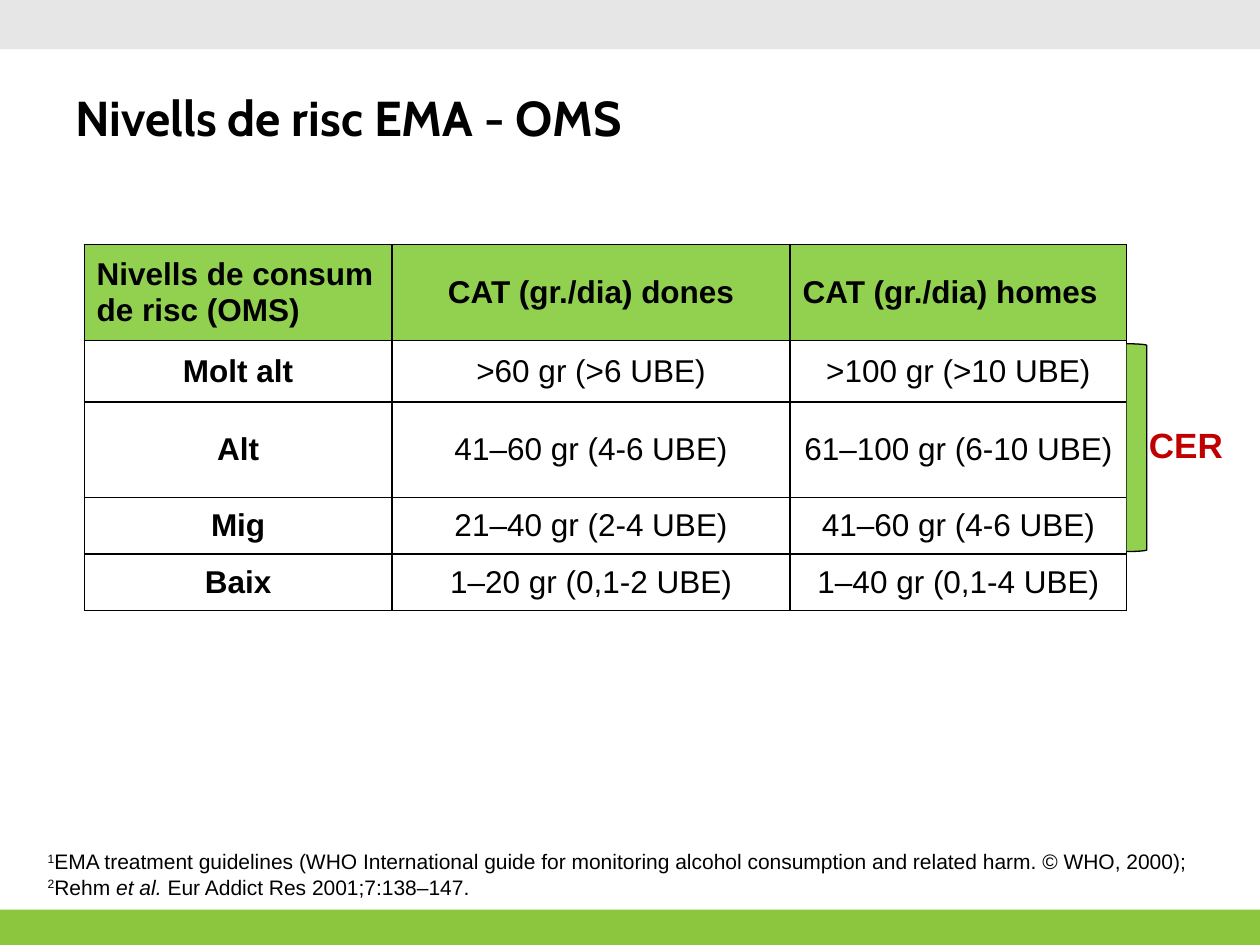
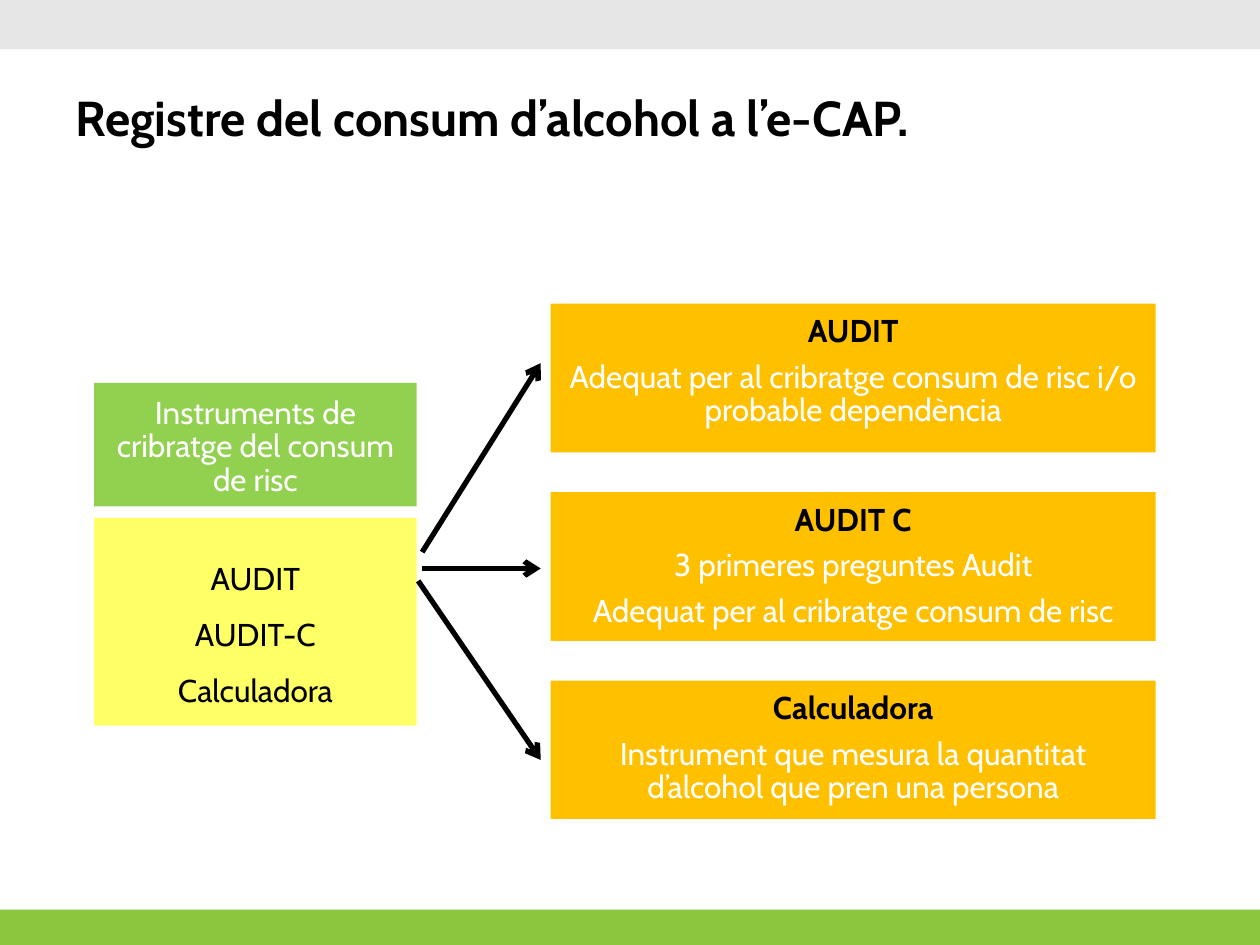
import pptx
import pptx.util
import pptx.dml.color
import pptx.enum.shapes
import pptx.enum.text
import pptx.oxml
import pptx.oxml.ns
from lxml import etree

Cm = pptx.util.Cm
Pt = pptx.util.Pt
RGBColor = pptx.dml.color.RGBColor
Shape = pptx.enum.shapes.MSO_SHAPE
Anchor = pptx.enum.text.MSO_ANCHOR
Align = pptx.enum.text.PP_ALIGN
qn = pptx.oxml.ns.qn

BLACK = RGBColor(0x00, 0x00, 0x00)
WHITE = RGBColor(0xFF, 0xFF, 0xFF)
RED = RGBColor(0xC0, 0x00, 0x00)
GREEN = RGBColor(0x92, 0xD0, 0x50)
FOOTER_GREEN = RGBColor(0x8C, 0xC6, 0x3E)
HEADER_GRAY = RGBColor(0xE6, 0xE6, 0xE6)
YELLOW = RGBColor(0xFF, 0xFF, 0x66)
ORANGE = RGBColor(0xFF, 0xC0, 0x00)

TITLE_FONT = "Cabin"
TABLE_FONT = "Arial"
TITLE_ONLY = 5


class Deck:
    """Shared style and the slide being built."""

    def __init__(self):
        self.presentation = pptx.Presentation()
        self.presentation.slide_width = Cm(25.4)
        self.presentation.slide_height = Cm(19.05)
        self.slide = None

    def style(self, font, name, size, color=BLACK, bold=False):
        font.name = name
        font.size = Pt(size)
        font.color.rgb = color
        font.bold = bold

    def frame(self, text_frame, anchor, top=0.13):
        text_frame.word_wrap = True
        text_frame.vertical_anchor = anchor
        text_frame.margin_left = text_frame.margin_right = Cm(0.25)
        text_frame.margin_top = Cm(top)
        text_frame.margin_bottom = Cm(0.13)

    def add_slide(self, title):
        layout = self.presentation.slide_layouts[TITLE_ONLY]
        self.slide = self.presentation.slides.add_slide(layout)
        # Bands
        self.shape(Shape.RECTANGLE, 0, 18.34, 25.4, 0.71, FOOTER_GREEN)
        self.shape(Shape.RECTANGLE, 0, 0, 25.4, 0.99, HEADER_GRAY)
        # Title
        shape = self.slide.shapes.title
        shape.left, shape.top = Cm(1.27), Cm(0.76)
        shape.width, shape.height = Cm(22.86), Cm(3.18)
        shape.text_frame.text = title
        self.frame(shape.text_frame, Anchor.MIDDLE)
        paragraph = shape.text_frame.paragraphs[0]
        paragraph.alignment = Align.LEFT
        self.style(paragraph.runs[0].font, TITLE_FONT, 28, bold=True)

    def shape(self, kind, left, top, width, height, fill, line=None):
        shape = self.slide.shapes.add_shape(
            kind, Cm(left), Cm(top), Cm(width), Cm(height))
        shape.shadow.inherit = False
        shape.fill.solid()
        shape.fill.fore_color.rgb = fill
        if line is None:
            shape.line.fill.background()
        else:
            shape.line.color.rgb = line
            shape.line.width = Pt(0.75)
        return shape

    def box(self, left, top, width, height, fill, lines, color=WHITE, heading=False,
            anchor=Anchor.TOP, inset=0.25, spacing=19, after=7):
        """Filled rectangle with centred lines, the first one optionally a heading."""
        shape = self.shape(Shape.RECTANGLE, left, top, width, height, fill)
        shape.text_frame.text = "\n".join(lines)
        self.frame(shape.text_frame, anchor, inset)
        for index, paragraph in enumerate(shape.text_frame.paragraphs):
            is_heading = heading and index == 0
            paragraph.alignment = Align.CENTER
            paragraph.line_spacing = Pt(spacing)
            paragraph.space_after = Pt(after)
            self.style(paragraph.runs[0].font, TITLE_FONT, 18,
                       BLACK if is_heading else color, is_heading)

    def text_box(self, left, top, width, height, anchor=Anchor.TOP):
        shape = self.slide.shapes.add_textbox(
            Cm(left), Cm(top), Cm(width), Cm(height))
        self.frame(shape.text_frame, anchor)
        return shape.text_frame

    def label(self, text, left, top, width, height):
        text_frame = self.text_box(left, top, width, height)
        text_frame.text = text
        text_frame.word_wrap = False
        self.style(text_frame.paragraphs[0].runs[0].font, TABLE_FONT, 20, RED, True)

    def references(self, lines, left, top, width, height):
        """Each line is a list of (text, mark), mark being "", "super" or "italic"."""
        text_frame = self.text_box(left, top, width, height, Anchor.BOTTOM)
        paragraph = text_frame.paragraphs[0]
        for index, line in enumerate(lines):
            if index:
                paragraph.add_line_break()
            for text, mark in line:
                run = paragraph.add_run()
                run.text = text
                self.style(run.font, TABLE_FONT, 12)
                run.font.italic = mark == "italic"
                if mark == "super":
                    run._r.get_or_add_rPr().set("baseline", "30000")

    def table(self, left, top, widths, heights, rows, left_headers):
        table = self.slide.shapes.add_table(
            len(rows), len(widths), Cm(left), Cm(top),
            Cm(sum(widths)), Cm(sum(heights))).table
        table.horz_banding = False
        for column, width in zip(table.columns, widths):
            column.width = Cm(width)
        for row, height in zip(table.rows, heights):
            row.height = Cm(height)
        for row_index, texts in enumerate(rows):
            for column_index, text in enumerate(texts):
                is_header = row_index == 0
                cell = table.cell(row_index, column_index)
                self.cell(cell, text, is_header, is_header or column_index == 0)
                if is_header and column_index in left_headers:
                    cell.text_frame.paragraphs[0].alignment = Align.LEFT

    def cell(self, cell, text, filled, bold):
        cell.text_frame.text = text
        cell.vertical_anchor = Anchor.MIDDLE
        cell.margin_left = cell.margin_right = Cm(0.25)
        cell.margin_top = cell.margin_bottom = Cm(0.18)
        paragraph = cell.text_frame.paragraphs[0]
        paragraph.alignment = Align.CENTER
        for run in paragraph.runs:
            self.style(run.font, TABLE_FONT, 18, bold=bold)
        # Borders come before the fill in the cell properties
        properties = cell._tc.get_or_add_tcPr()
        for side in ("a:lnL", "a:lnR", "a:lnT", "a:lnB"):
            border = etree.SubElement(properties, qn(side), w=str(Pt(1)))
            fill = etree.SubElement(border, qn("a:solidFill"))
            etree.SubElement(fill, qn("a:srgbClr"), val=str(BLACK))
        if filled:
            cell.fill.solid()
            cell.fill.fore_color.rgb = GREEN
        else:
            cell.fill.background()

    def arrow(self, start, end):
        connector = self.slide.shapes.add_connector(
            pptx.enum.shapes.MSO_CONNECTOR.STRAIGHT,
            Cm(start[0]), Cm(start[1]), Cm(end[0]), Cm(end[1]))
        connector.line.color.rgb = BLACK
        connector.line.width = Pt(3)
        etree.SubElement(connector.line._get_or_add_ln(), qn("a:tailEnd"), type="arrow")
        etree.SubElement(connector._element.spPr, qn("a:effectLst"))


def build_risk_levels(deck):
    deck.add_slide("Nivells de risc EMA - OMS")
    # Risk table
    deck.table(
        1.7, 4.93, [6.2, 8.03, 6.78], [1.93, 1.24, 1.93, 1.14, 1.14],
        [["Nivells de consum\vde risc (OMS)", "CAT (gr./dia) dones", "CAT (gr./dia) homes"],
         ["Molt alt", ">60 gr (>6 UBE)", ">100 gr (>10 UBE)"],
         ["Alt", "41–60 gr (4-6 UBE)", "61–100 gr (6-10 UBE)"],
         ["Mig", "21–40 gr (2-4 UBE)", "41–60 gr (4-6 UBE)"],
         ["Baix", "1–20 gr (0,1-2 UBE)", "1–40 gr (0,1-4 UBE)"]],
        left_headers=(0, 2))
    # References
    deck.references(
        [[("1", "super"),
          ("EMA treatment guidelines (WHO International guide for monitoring alcohol "
           "consumption and related harm. © WHO, 2000);", "")],
         [("2", "super"), ("Rehm ", ""), ("et al. ", "italic"),
          ("Eur Addict Res 2001;7:138–147.", "")]],
        0.71, 16.99, 24, 1.27)
    # Bracket over the risk rows
    deck.label("CER", 22.91, 8.41, 2.03, 1.12)
    deck.shape(Shape.RIGHT_BRACKET, 22.71, 6.93, 0.41, 4.19, GREEN, BLACK)


def build_screening(deck):
    deck.add_slide("Registre del consum d’alcohol a l’e-CAP.")
    # Instruments
    deck.box(1.9, 7.72, 6.5, 2.49, GREEN,
             ["Instruments de cribratge del consum de risc"], anchor=Anchor.MIDDLE)
    deck.box(1.9, 10.44, 6.5, 4.19, YELLOW, ["AUDIT", "AUDIT-C", "Calculadora"],
             color=BLACK, inset=0.61, spacing=28, after=4)
    # Description of each instrument
    descriptions = [
        (3, ["AUDIT", "Adequat per al cribratge consum de risc i/o probable dependència"]),
        (3, ["AUDIT C", "3 primeres preguntes Audit",
             "Adequat per al cribratge consum de risc"]),
        (2.79, ["Calculadora",
                "Instrument que mesura la quantitat d’alcohol que pren una persona"]),
    ]
    for index, (height, lines) in enumerate(descriptions):
        deck.box(11.1, 6.12 + 3.8 * index, 12.2, height, ORANGE, lines, heading=True)
    # Arrows
    for start, end_top in [((8.51, 11.13), 7.32), ((8.51, 11.46), 11.46),
                           ((8.43, 11.71), 15.32)]:
        deck.arrow(start, (10.9, end_top))


def main():
    deck = Deck()
    build_risk_levels(deck)
    build_screening(deck)
    deck.presentation.save("out.pptx")


if __name__ == "__main__":
    main()
